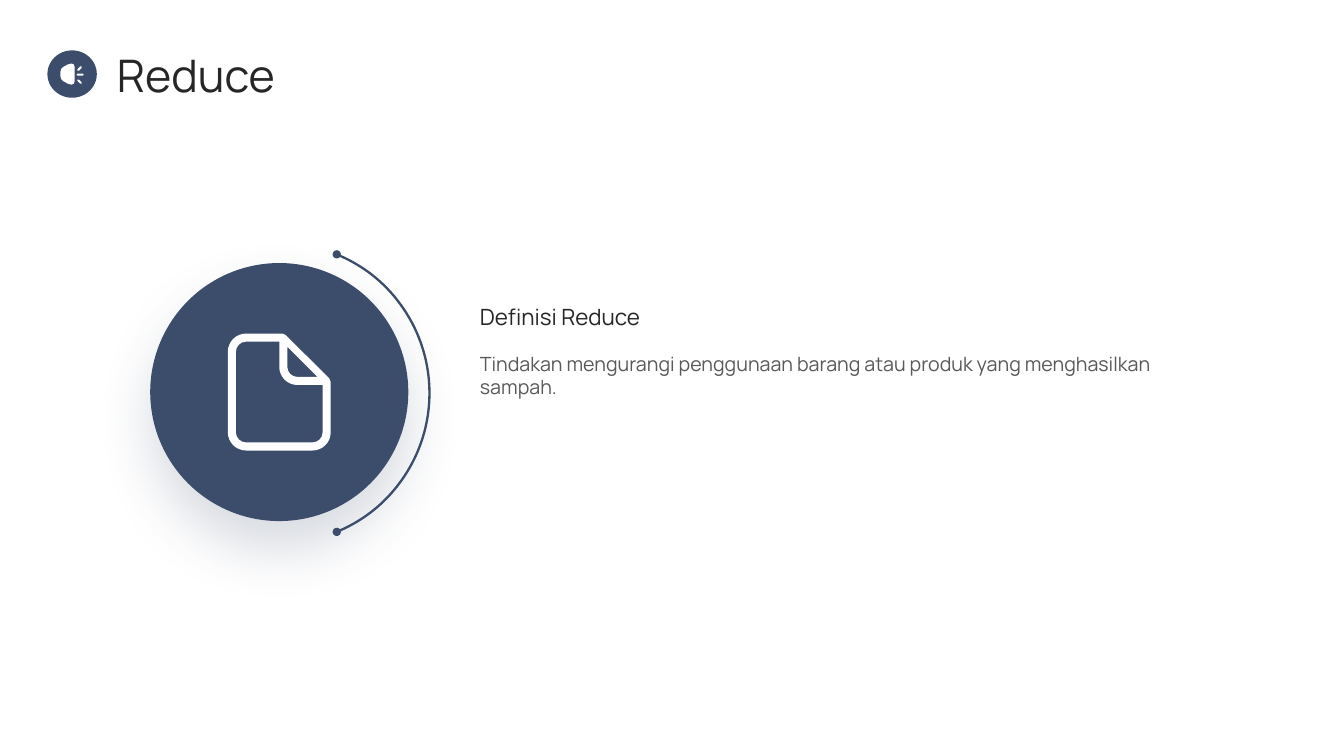
from math import cos, hypot, radians, sin, tan

from lxml import etree
from pptx import Presentation
from pptx.dml.color import RGBColor
from pptx.enum.shapes import MSO_SHAPE
from pptx.enum.text import MSO_ANCHOR
from pptx.oxml.ns import qn
from pptx.util import Inches, Pt

OVAL = MSO_SHAPE.OVAL
TOP, MIDDLE = MSO_ANCHOR.TOP, MSO_ANCHOR.MIDDLE
FONT = "Manrope"
COLORS = {"navy": "3C4C6B", "white": "FFFFFF", "title": "262626", "body": "595959"}
CIRCLE_PULL = 0.55  # Bezier handle length that makes a quarter circle

# Contours are lists of corners: x, y, corner radius
DOCUMENT_ICON = [
    [(2.26, 3.31, 0.18), (2.82, 3.31, 0.02), (3.28, 3.77, 0.02),
     (3.28, 4.47, 0.18), (2.26, 4.47, 0.18)],
    [(2.85, 3.44, 0), (3.15, 3.74, 0), (2.85, 3.74, 0.1)],
    [(2.34, 3.39, 0.1), (2.77, 3.39, 0), (2.77, 3.82, 0.18),
     (3.2, 3.82, 0), (3.2, 4.39, 0.1), (2.34, 4.39, 0.1)],
]
HORN = [(0.6, 0.68, 0.03), (0.69, 0.63, 0.02), (0.74, 0.63, 0.03),
        (0.74, 0.84, 0.03), (0.69, 0.84, 0.02), (0.6, 0.79, 0.03)]
SOUND_RAYS = [((0.77, 0.7), (0.81, 0.66)), ((0.76, 0.74), (0.83, 0.74)),
              ((0.77, 0.79), (0.81, 0.83))]


def color(name):
    return RGBColor.from_string(COLORS[name])


def fill_plain(shape, name):
    shape.shadow.inherit = False
    shape.fill.solid()
    shape.fill.fore_color.rgb = color(name)
    shape.line.fill.background()


def add_text(page, text, place, size, name, anchor=TOP):
    box = page.shapes.add_textbox(*map(Inches, place))
    frame = box.text_frame
    frame.word_wrap = True
    frame.vertical_anchor = anchor
    frame.margin_left = frame.margin_right = 0
    frame.margin_top = frame.margin_bottom = 0
    para = frame.paragraphs[0]
    para.text = text
    para.font.name = FONT
    para.font.size = Pt(size)
    para.font.color.rgb = color(name)


def add_circle(page, place):
    circle = page.shapes.add_shape(OVAL, *map(Inches, place))
    fill_plain(circle, "navy")
    return circle


def add_soft_shadow(shape):
    effects = shape._element.spPr.find(qn("a:effectLst"))
    shadow = etree.SubElement(effects, qn("a:outerShdw"), blurRad=str(Pt(40)),
                              dist=str(Pt(20)), dir="5400000", algn="t",
                              rotWithShape="0")
    tint = etree.SubElement(shadow, qn("a:srgbClr"), val=COLORS["navy"])
    etree.SubElement(tint, qn("a:alpha"), val="20000")


def toward(start, end, length):
    share = length / hypot(end[0] - start[0], end[1] - start[1])
    return tuple(a + (b - a) * share for a, b in zip(start, end))


def round_corners(corners):
    """Return steps: one point for a line, three points for a curve."""
    steps = []
    for i, (x, y, radius) in enumerate(corners):
        corner = (x, y)
        if not radius:
            steps.append([corner])
            continue
        start = toward(corner, corners[i - 1][:2], radius)
        end = toward(corner, corners[(i + 1) % len(corners)][:2], radius)
        steps.append([start])
        steps.append([toward(start, corner, radius * CIRCLE_PULL),
                      toward(end, corner, radius * CIRCLE_PULL), end])
    return steps


def ray_corners(start, end, half=0.01):
    across = toward((0, 0), (start[1] - end[1], end[0] - start[0]), half)
    return [(point[0] + side * across[0], point[1] + side * across[1], half * 0.9)
            for point, side in ((start, 1), (end, 1), (end, -1), (start, -1))]


def add_outline(page, contours, close=True):
    builder = None
    for steps in contours:
        points = [(Inches(x), Inches(y)) for step in steps for x, y in step]
        if builder is None:
            builder = page.shapes.build_freeform(*points[0])
        else:
            builder.move_to(*points[0])
        builder.add_line_segments(points[1:], close=close)
    shape = builder.convert_to_shape()

    # Join each three-point step into one curve
    lines = iter(list(shape._element.iter(qn("a:lnTo"))))
    for steps in contours:
        for step in steps[1:]:
            first, *others = [next(lines) for _ in step]
            if others:
                first.tag = qn("a:cubicBezTo")
                for line in others:
                    first.append(line[0])
                    line.getparent().remove(line)
    return shape


def add_icon(page, contours):
    icon = add_outline(page, [round_corners(corners) for corners in contours])
    fill_plain(icon, "white")


def arc_steps(center, radius, sweep, count=4):
    turn = radians(2 * sweep / count)
    pull = 4 / 3 * tan(turn / 4)

    def spot(angle, along=0):
        return (center[0] + radius * (cos(angle) - along * sin(angle)),
                center[1] + radius * (sin(angle) + along * cos(angle)))

    angles = [radians(sweep) - turn * i for i in range(count + 1)]
    return [[spot(angles[0])]] + [[spot(a, -pull), spot(b, pull), spot(b)]
                                  for a, b in zip(angles, angles[1:])]


def add_dotted_arc(page, center, radius, sweep):
    arc = add_outline(page, [arc_steps(center, radius, sweep)], close=False)
    arc.shadow.inherit = False
    arc.fill.background()
    arc.line.color.rgb = color("navy")
    arc.line.width = Pt(1.63)
    line = arc.line._get_or_add_ln()
    for end in ("a:headEnd", "a:tailEnd"):
        etree.SubElement(line, qn(end), type="oval")


def main():
    deck = Presentation()
    deck.slide_width, deck.slide_height = Inches(13.33), Inches(7.5)
    page = deck.slides.add_slide(deck.slide_layouts[6])

    # Definition
    add_text(page, "Definisi Reduce", (4.76, 3.01, 7.09, 0.4), 16, "title")
    add_text(page, "Tindakan mengurangi penggunaan barang atau produk yang "
             "menghasilkan sampah.", (4.76, 3.49, 7.09, 2.53), 14, "body")

    # Large emblem
    add_dotted_arc(page, (2.77, 3.9), 1.49, 67.5)
    add_soft_shadow(add_circle(page, (1.49, 2.61, 2.56, 2.56)))
    add_icon(page, DOCUMENT_ICON)

    # Header
    add_text(page, "Reduce", (1.16, 0.51, 11.43, 0.47), 32, "title", MIDDLE)
    add_circle(page, (0.47, 0.5, 0.49, 0.47))
    add_icon(page, [HORN] + [ray_corners(*ray) for ray in SOUND_RAYS])

    deck.save("out.pptx")


if __name__ == "__main__":
    main()
